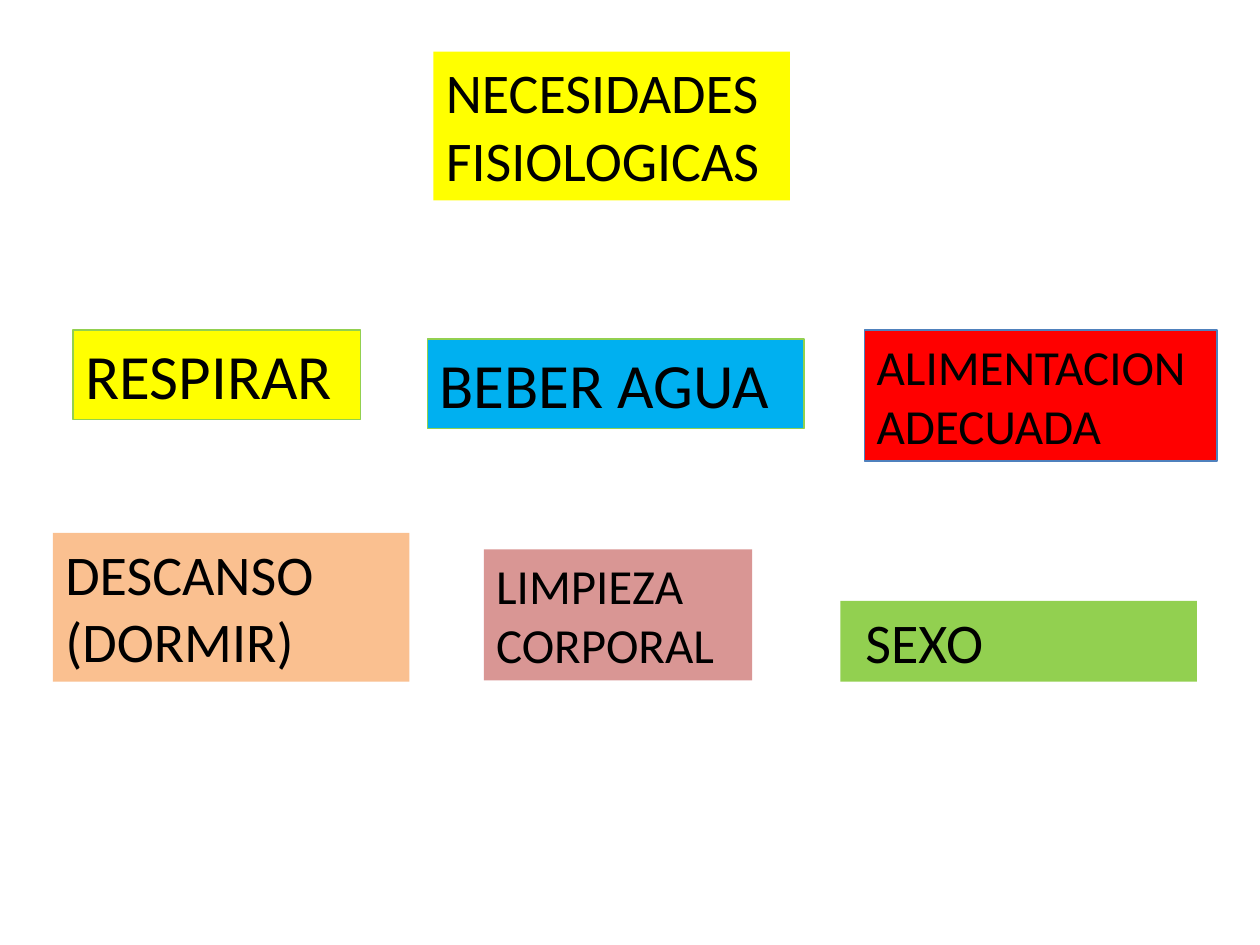
from pptx import Presentation
from pptx.dml.color import RGBColor
from pptx.enum.text import MSO_AUTO_SIZE
from pptx.util import Emu, Pt

FIT_SHAPE = MSO_AUTO_SIZE.SHAPE_TO_FIT_TEXT
PX = 9144  # EMU: 100 px to the inch
BLANK_LAYOUT = 6


def color(value):
    return RGBColor.from_string(value)


class NeedsSlide:
    font = "Calibri"
    text_color = "000000"
    line_width = 0.75

    def __init__(self, presentation):
        layout = presentation.slide_layouts[BLANK_LAYOUT]
        self.slide = presentation.slides.add_slide(layout)

    def box(self, text, bounds, size, fill, line=None):
        shape = self.slide.shapes.add_textbox(*(Emu(n * PX) for n in bounds))
        shape.fill.solid()
        shape.fill.fore_color.rgb = color(fill)
        if line:
            shape.line.color.rgb = color(line)
            shape.line.width = Pt(self.line_width)
        frame = shape.text_frame
        frame.word_wrap = True
        frame.auto_size = FIT_SHAPE
        run = frame.paragraphs[0].add_run()
        run.text = text
        run.font.name = self.font
        run.font.size = Pt(size)
        run.font.color.rgb = color(self.text_color)


def main():
    presentation = Presentation()
    presentation.slide_width = Emu(1000 * PX)
    presentation.slide_height = Emu(750 * PX)
    needs = NeedsSlide(presentation)

    needs.box("NECESIDADES FISIOLOGICAS", (344, 41, 283, 118), 32, "FFFF00")

    needs.box("RESPIRAR", (58, 262, 228, 71), 36, "FFFF00", "92D050")
    needs.box("BEBER AGUA", (339, 269, 299, 71), 36, "00B0F0", "92D050")
    needs.box("ALIMENTACION ADECUADA", (686, 262, 280, 104), 28, "FF0000", "4F81BD")

    needs.box("DESCANSO (DORMIR)", (42, 423, 283, 118), 32, "FAC090")
    needs.box("LIMPIEZA CORPORAL", (384, 436, 213, 104), 28, "D99694")
    needs.box(" SEXO", (667, 477, 283, 64), 32, "92D050")

    presentation.save("out.pptx")


if __name__ == "__main__":
    main()
